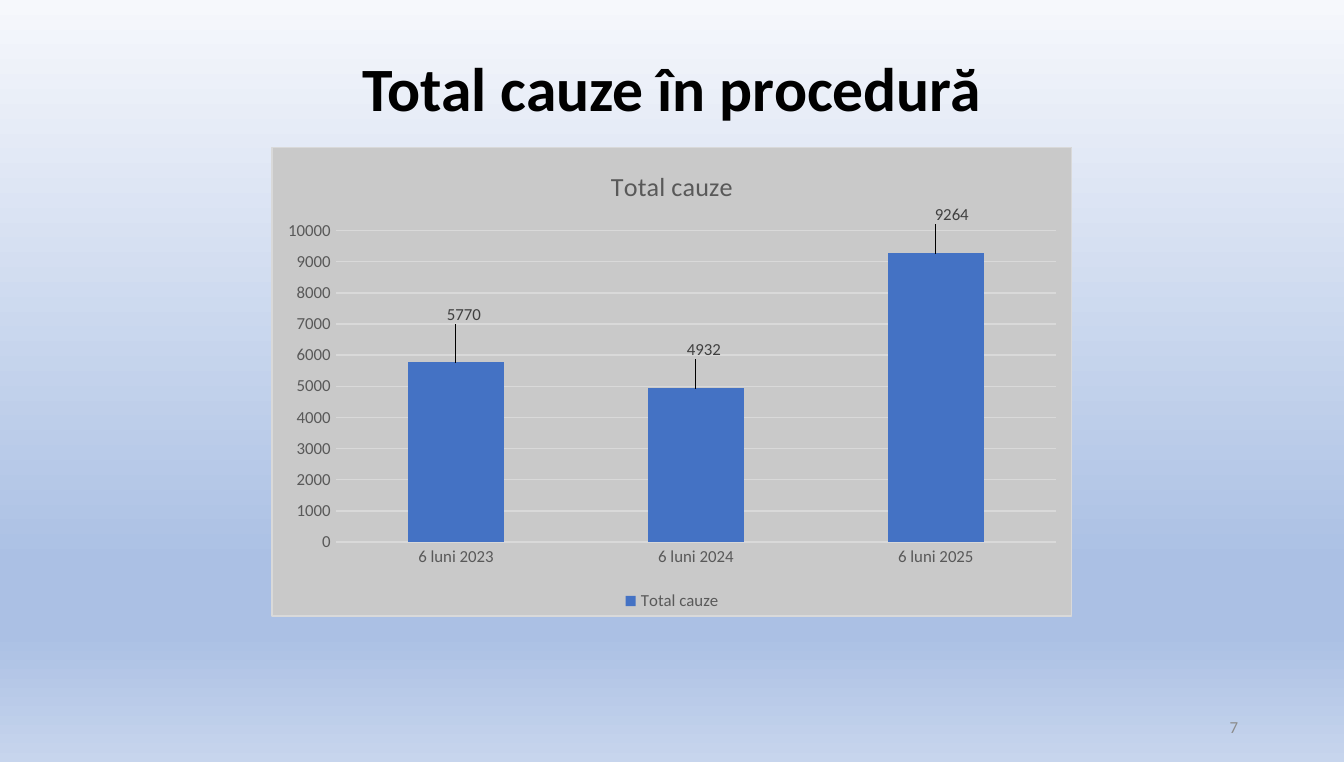
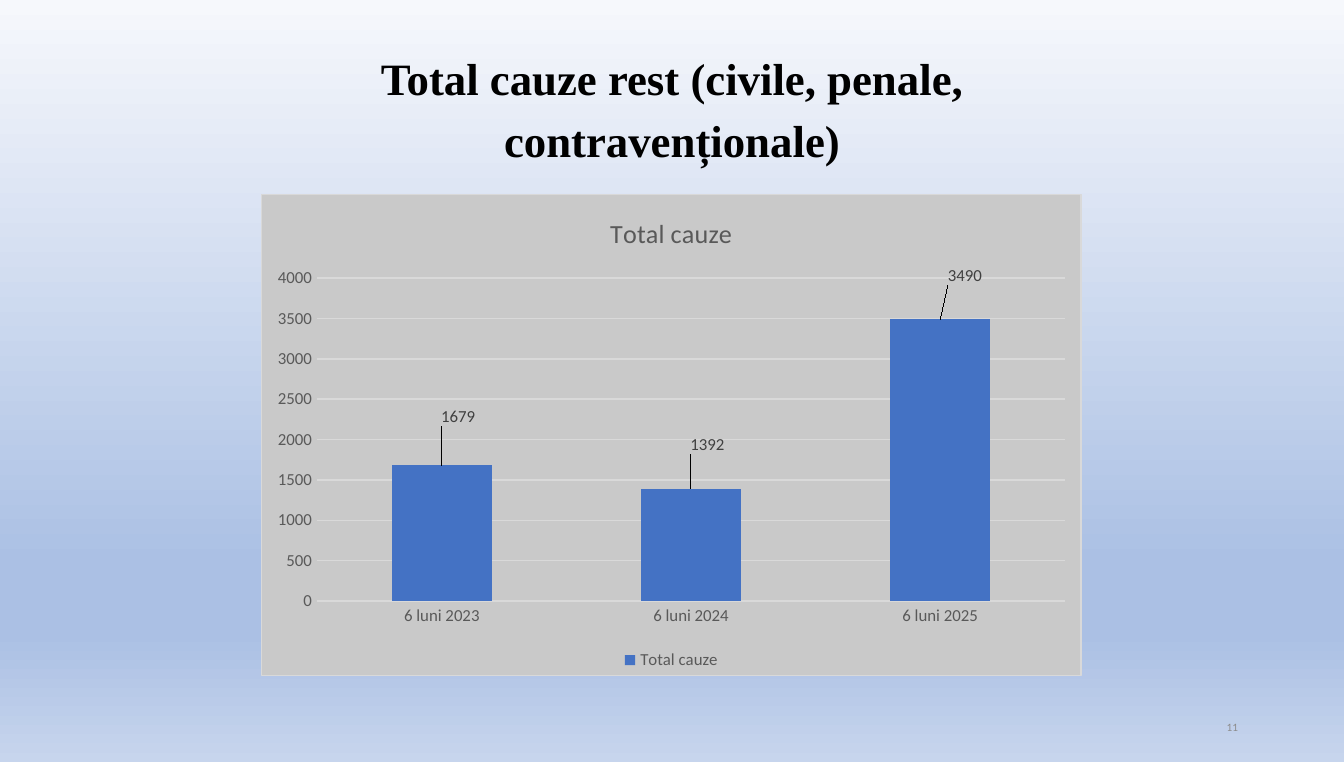
from lxml import etree
from pptx import Presentation
from pptx.chart.data import CategoryChartData
from pptx.dml.color import RGBColor
from pptx.enum import chart as ch, text
from pptx.oxml import parse_xml
from pptx.oxml.ns import nsdecls, qn
from pptx.util import Inches, Pt

BLACK = RGBColor(0x00, 0x00, 0x00)
BAR_BLUE = RGBColor(0x44, 0x72, 0xC4)
PANEL_GREY = RGBColor(0xC9, 0xC9, 0xC9)
LINE_GREY = RGBColor(0xD9, 0xD9, 0xD9)
AXIS_GREY = RGBColor(0x59, 0x59, 0x59)
LABEL_GREY = RGBColor(0x40, 0x40, 0x40)
NUMBER_GREY = RGBColor(0x8C, 0x8C, 0x8C)
BACKGROUND = [
    (0, RGBColor(0xF6, 0xF8, 0xFC)),
    (74, RGBColor(0xAB, 0xC0, 0xE4)),
    (83, RGBColor(0xAB, 0xC0, 0xE4)),
    (100, RGBColor(0xC7, 0xD5, 0xED)),
]

PERIODS = ["6 luni 2023", "6 luni 2024", "6 luni 2025"]
SERIES = "Total cauze"
NUMBER_BOX = (7.06, 5.26, 2.25, 0.3)

# label_shifts: offset of each value label, as fractions of the chart size
SLIDES = [
    {
        "title": "Total cauze în procedură",
        "title_box": (0.5, 0.42, 9, 0.52),
        "title_font": ("Calibri", 33),
        "line_spacing": 0.9,
        "anchor": text.MSO_ANCHOR.MIDDLE,
        "number": ("7", 9),
        "chart_box": (2.02, 1.09, 5.96, 3.5),
        "values": [5770, 4932, 9264],
        "label_shifts": [(0.01, -0.07), (0.01, -0.05), (0.02, -0.05)],
    },
    {
        "title": "Total cauze rest (civile, penale, contravenționale)",
        "title_box": (2.5, 0.27, 5, 1),
        "title_font": ("Times New Roman", 24),
        "line_spacing": 1.15,
        "anchor": text.MSO_ANCHOR.TOP,
        "number": ("11", 6),
        "chart_box": (1.94, 1.44, 6.11, 3.59),
        "values": [1679, 1392, 3490],
        "label_shifts": [(0.02, -0.07), (0.02, -0.06), (0.03, -0.06)],
    },
]


def style_font(font, size, color, name="Calibri", bold=False):
    font.name = name
    font.size = Pt(size)
    font.bold = bold
    font.color.rgb = color


def set_background(master):
    fill = master.background.fill
    fill.gradient()
    fill.gradient_angle = 270
    stops = master._element.find(".//" + qn("a:gsLst"))
    for stop in list(stops):
        stops.remove(stop)
    for percent, color in BACKGROUND:
        stop = etree.SubElement(stops, qn("a:gs"), pos=str(percent * 1000))
        etree.SubElement(stop, qn("a:srgbClr"), val=str(color))


def add_title(s, item):
    sp = s.shapes.title
    sp.left, sp.top, sp.width, sp.height = map(Inches, item["title_box"])
    tf = sp.text_frame
    tf.text = item["title"]
    tf.word_wrap = True
    tf.auto_size = text.MSO_AUTO_SIZE.NONE
    tf.vertical_anchor = item["anchor"]
    p = tf.paragraphs[0]
    p.alignment = text.PP_ALIGN.CENTER
    p.line_spacing = item["line_spacing"]
    name, size = item["title_font"]
    style_font(p.runs[0].font, size, BLACK, name, bold=True)


def add_number(s, number, size):
    tf = s.shapes.add_textbox(*map(Inches, NUMBER_BOX)).text_frame
    tf.text = number
    tf.word_wrap = True
    tf.vertical_anchor = text.MSO_ANCHOR.MIDDLE
    p = tf.paragraphs[0]
    p.alignment = text.PP_ALIGN.RIGHT
    style_font(p.runs[0].font, size, NUMBER_GREY)


def fill_chart_area(chart):
    area = parse_xml(
        f'<c:spPr {nsdecls("c", "a")}>'
        f'<a:solidFill><a:srgbClr val="{PANEL_GREY}"/></a:solidFill>'
        f'<a:ln w="{Pt(0.75)}"><a:solidFill><a:srgbClr val="{LINE_GREY}"/>'
        "</a:solidFill></a:ln></c:spPr>"
    )
    chart._chartSpace.find(qn("c:chart")).addnext(area)


def add_value_labels(series, shifts):
    labels = series.data_labels
    labels.show_value = True
    style_font(labels.font, 9, LABEL_GREY)
    for i, (dx, dy) in enumerate(shifts):
        label = series.points[i].data_label
        style_font(label.font, 9, LABEL_GREY)
        label.position = ch.XL_LABEL_POSITION.OUTSIDE_END
    for element, (dx, dy) in zip(series._element.iter(qn("c:dLbl")), shifts):
        element.find(qn("c:idx")).addnext(parse_xml(
            f'<c:layout {nsdecls("c")}><c:manualLayout>'
            f'<c:x val="{dx}"/><c:y val="{dy}"/></c:manualLayout></c:layout>'
        ))


def add_column_chart(s, item):
    data = CategoryChartData()
    data.categories = PERIODS
    data.add_series(SERIES, item["values"])
    chart = s.shapes.add_chart(
        ch.XL_CHART_TYPE.COLUMN_CLUSTERED, *map(Inches, item["chart_box"]), data
    ).chart
    style_font(chart.font, 10, BLACK)
    fill_chart_area(chart)

    chart.has_title = True
    tf = chart.chart_title.text_frame
    tf.text = SERIES
    style_font(tf.paragraphs[0].runs[0].font, 14, AXIS_GREY)

    chart.has_legend = True
    chart.legend.position = ch.XL_LEGEND_POSITION.BOTTOM
    chart.legend.include_in_layout = False
    style_font(chart.legend.font, 9, AXIS_GREY)

    for axis in (chart.category_axis, chart.value_axis):
        axis.major_tick_mark = ch.XL_TICK_MARK.NONE
        axis.format.line.fill.background()
        style_font(axis.tick_labels.font, 9, AXIS_GREY)
    grid = chart.value_axis.major_gridlines.format.line
    grid.color.rgb = LINE_GREY
    grid.width = Pt(0.75)

    plot = chart.plots[0]
    plot.gap_width = 150
    plot.vary_by_categories = False
    series = plot.series[0]
    series.format.fill.solid()
    series.format.fill.fore_color.rgb = BAR_BLUE
    add_value_labels(series, item["label_shifts"])


def main():
    prs = Presentation()
    prs.slide_width, prs.slide_height = Inches(10), Inches(5.67)
    set_background(prs.slide_master)
    title_only = prs.slide_layouts[5]
    for item in SLIDES:
        s = prs.slides.add_slide(title_only)
        add_title(s, item)
        add_number(s, *item["number"])
        add_column_chart(s, item)
    prs.save("out.pptx")


if __name__ == "__main__":
    main()
